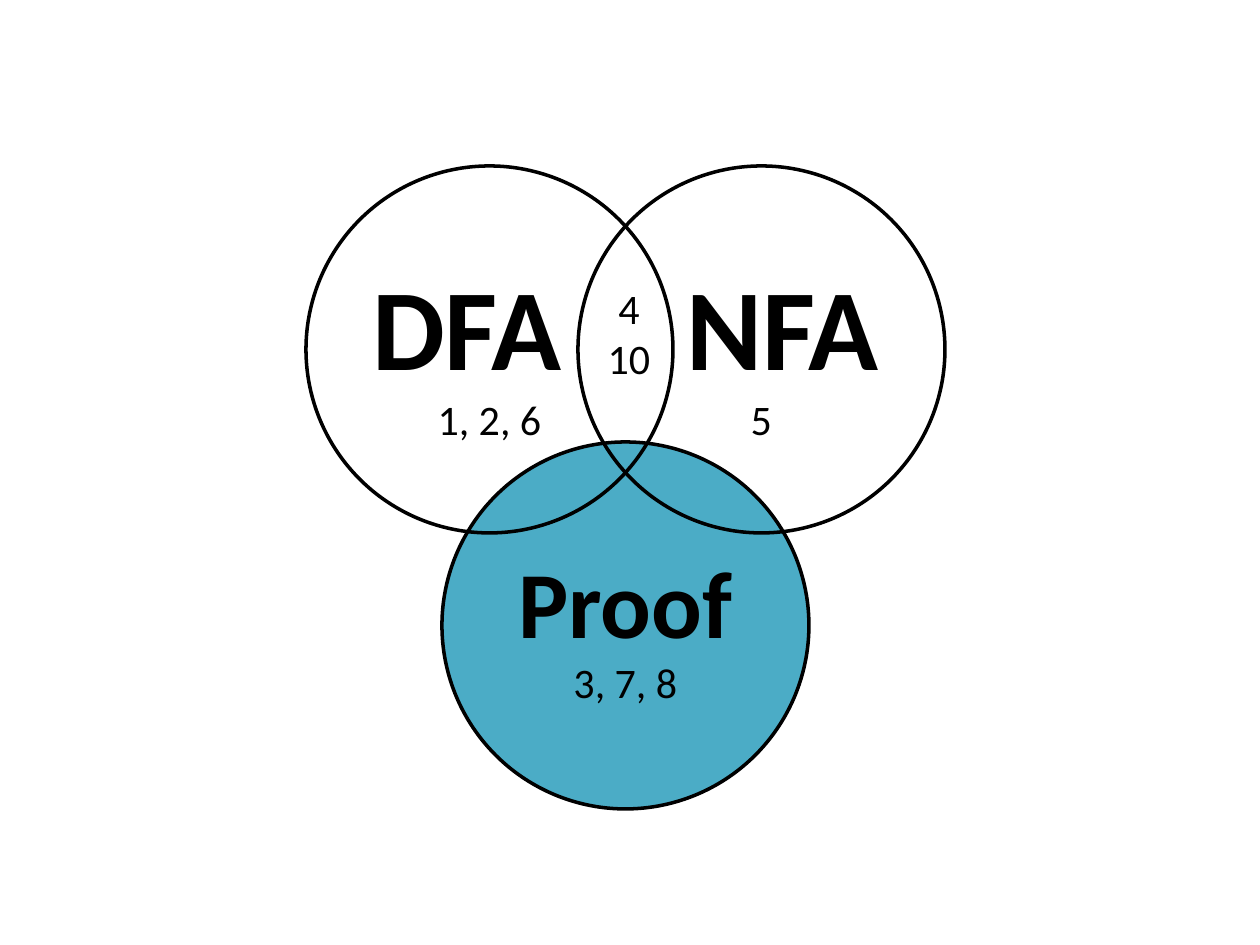
from pptx import Presentation
from pptx import util as u
from pptx.dml.color import RGBColor
from pptx.enum import shapes, text

PX = 914400 / 126
INK = "000000"
TEAL = "4BACC6"
LEFT, CENTER, RIGHT = text.PP_ALIGN.LEFT, text.PP_ALIGN.CENTER, text.PP_ALIGN.RIGHT


def px(length):
    return u.Emu(round(length * PX))


def color(hex_code):
    return RGBColor.from_string(hex_code)


class VennSlide:
    """Holds the style and the group the diagram is drawn in."""

    font = "Calibri"
    diameter = 367
    line_width = 2
    number_size = 24

    def __init__(self, deck):
        self.slide = deck.slides.add_slide(deck.slide_layouts[6])
        self.diagram = self.slide.shapes.add_group_shape()

    def set_text(self, paragraph, words, size, bold=False, align=CENTER):
        paragraph.text = words
        paragraph.alignment = align
        font = paragraph.font
        font.name, font.size, font.bold = self.font, u.Pt(size), bold
        font.color.rgb = color(INK)

    def circle(self, left, top, name, numbers, size, align=CENTER, fill=None):
        side = px(self.diameter)
        circle = self.diagram.shapes.add_shape(
            shapes.MSO_SHAPE.OVAL, px(left), px(top), side, side)
        circle.shadow.inherit = False
        if fill:
            circle.fill.solid()
            circle.fill.fore_color.rgb = color(fill)
        else:
            circle.fill.background()
        circle.line.color.rgb = color(INK)
        circle.line.width = u.Pt(self.line_width)
        frame = circle.text_frame
        frame.vertical_anchor = text.MSO_ANCHOR.MIDDLE
        self.set_text(frame.paragraphs[0], name, size, True, align)
        self.set_text(frame.add_paragraph(), numbers, self.number_size)

    def label(self, left, top, width, height, words):
        box = self.diagram.shapes.add_textbox(px(left), px(top), px(width), px(height))
        frame = box.text_frame
        frame.word_wrap = False
        frame.auto_size = text.MSO_AUTO_SIZE.SHAPE_TO_FIT_TEXT
        self.set_text(frame.paragraphs[0], words, self.number_size)


def main():
    deck = Presentation()
    deck.slide_width, deck.slide_height = px(1260), px(945)
    venn = VennSlide(deck)

    # Three sets: Proof sits midway below the other two
    left, top, step = 306, 166, 272
    venn.circle(left + step // 2, top + 276, "Proof", "3, 7, 8", 54, fill=TEAL)
    venn.circle(left, top, "DFA", "1, 2, 6", 66, align=LEFT)
    venn.circle(left + step, top, "NFA", "5", 66, align=RIGHT)

    # Overlap of DFA and NFA
    venn.label(595, 276, 68, 115, "4\n10")

    deck.save("out.pptx")


if __name__ == "__main__":
    main()
